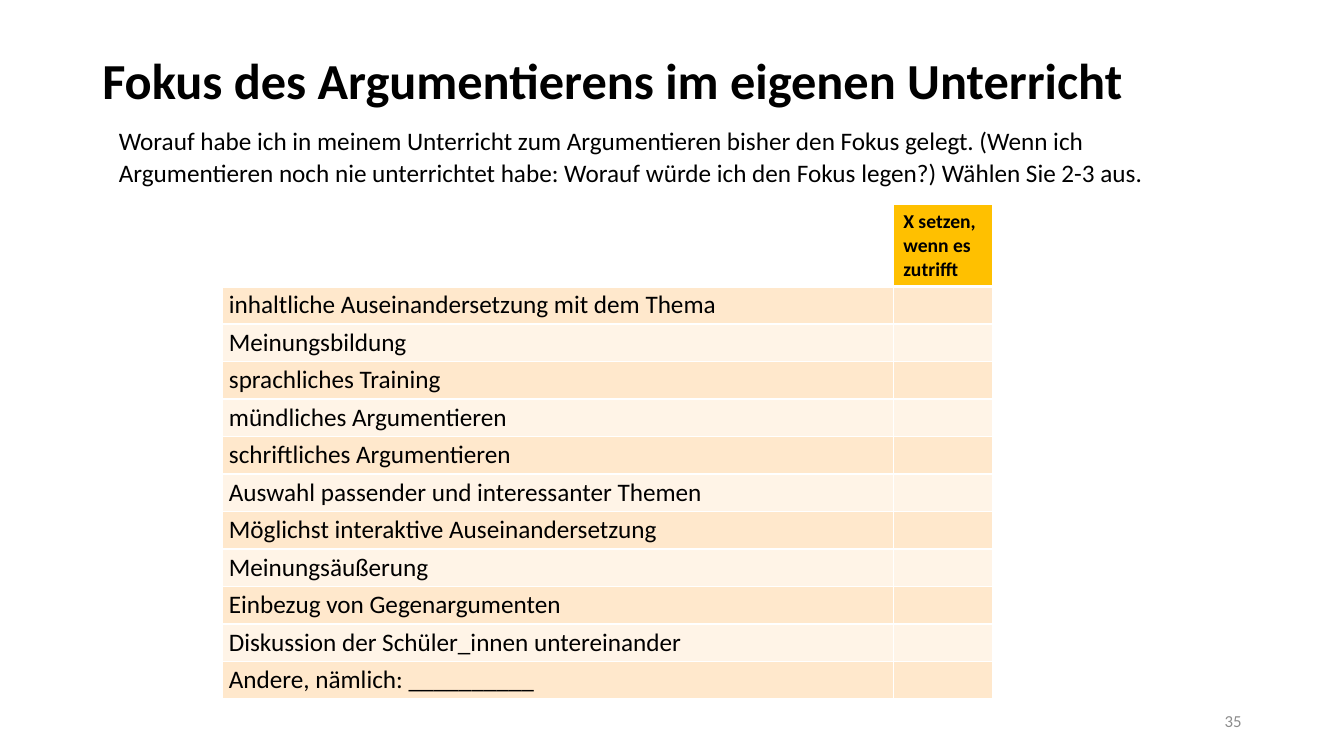
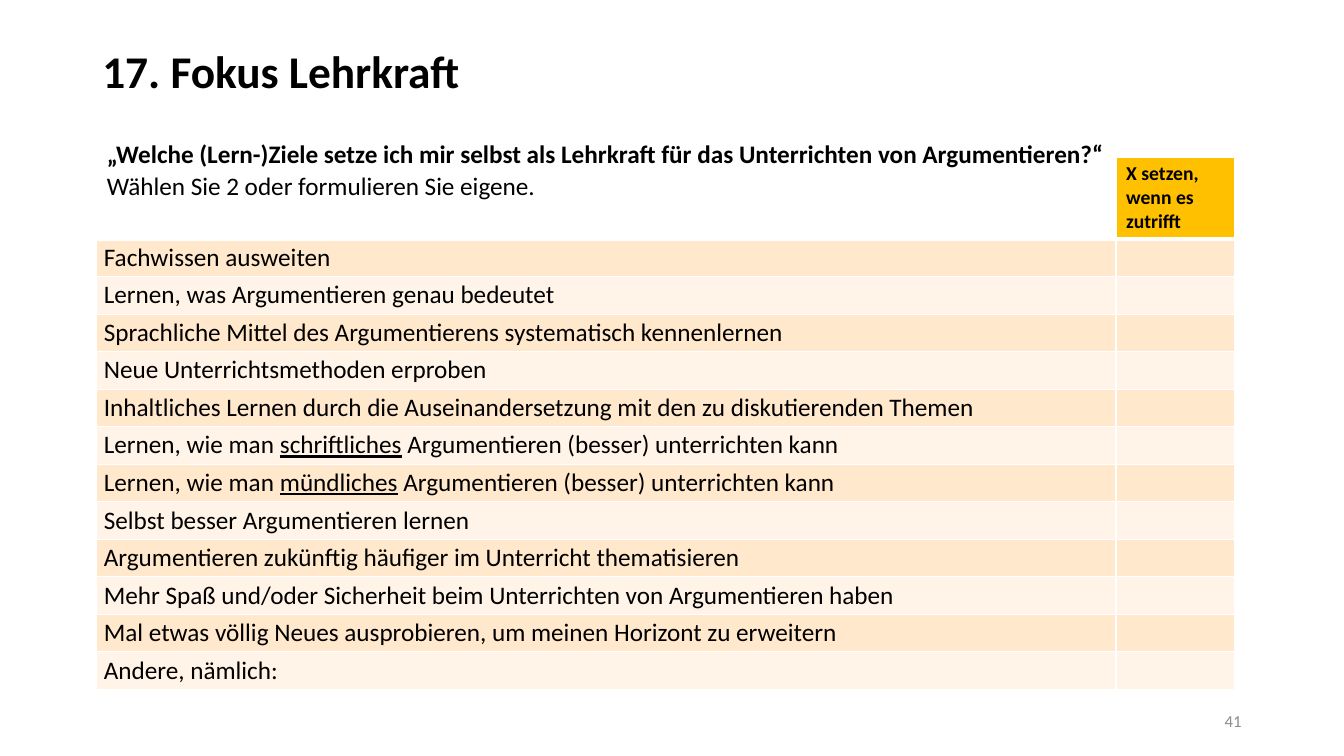
from lxml import etree
from pptx import Presentation
from pptx.dml.color import RGBColor
from pptx.enum.text import MSO_ANCHOR, PP_ALIGN
from pptx.oxml.ns import qn
from pptx.util import Pt

MIDDLE, TOP = MSO_ANCHOR.MIDDLE, MSO_ANCHOR.TOP
LEFT, RIGHT = PP_ALIGN.LEFT, PP_ALIGN.RIGHT

FONT = "Calibri"
BLACK, GREY, WHITE = "000000", "8C8C8C", "FFFFFF"
AMBER = "FFC000"
BANDS = ("FFE8CC", "FFF4E7")
BODY_SIZE = 18
HEADER_HEIGHT, ROW_HEIGHT = 58.5, 26.8
MARK_HEADING = "X setzen, wenn es zutrifft"

TEACHING_FOCUS = [
    "inhaltliche Auseinandersetzung mit dem Thema",
    "Meinungsbildung",
    "sprachliches Training",
    "mündliches Argumentieren",
    "schriftliches Argumentieren",
    "Auswahl passender und interessanter Themen",
    "Möglichst interaktive Auseinandersetzung",
    "Meinungsäußerung",
    "Einbezug von Gegenargumenten",
    "Diskussion der Schüler_innen untereinander",
    "Andere, nämlich: __________",
]


def learn_to_teach(mode):
    return [("Lernen, wie man ", False, False), (mode, False, True),
            (" Argumentieren (besser) unterrichten kann", False, False)]


TEACHER_GOALS = [
    "Fachwissen ausweiten",
    "Lernen, was Argumentieren genau bedeutet",
    "Sprachliche Mittel des Argumentierens systematisch kennenlernen",
    "Neue Unterrichtsmethoden erproben",
    "Inhaltliches Lernen durch die Auseinandersetzung mit den zu diskutierenden Themen",
    learn_to_teach("schriftliches"),
    learn_to_teach("mündliches"),
    "Selbst besser Argumentieren lernen",
    "Argumentieren zukünftig häufiger im Unterricht thematisieren",
    "Mehr Spaß und/oder Sicherheit beim Unterrichten von Argumentieren haben",
    "Mal etwas völlig Neues ausprobieren, um meinen Horizont zu erweitern",
    "Andere, nämlich:",
]


def color(hex_string):
    return RGBColor.from_string(hex_string)


class Deck:
    def __init__(self):
        self.prs = Presentation()
        self.prs.slide_width, self.prs.slide_height = Pt(960), Pt(540)
        self.slide = None

    def new_slide(self):
        self.slide = self.prs.slides.add_slide(self.prs.slide_layouts[6])

    def add_runs(self, paragraph, content, size, ink=BLACK, bold=False):
        """Content is a string or a list of (text, bold, underline)."""
        runs = [(content, bold, False)] if isinstance(content, str) else content
        for text, is_bold, is_underlined in runs:
            run = paragraph.add_run()
            run.text = text
            font = run.font
            font.name, font.size, font.bold = FONT, Pt(size), is_bold
            font.underline = is_underlined
            font.color.rgb = color(ink)

    def text(self, box, content, size, ink=BLACK, bold=False, anchor=MIDDLE, align=LEFT):
        frame = self.slide.shapes.add_textbox(*map(Pt, box)).text_frame
        frame.word_wrap = True
        frame.vertical_anchor = anchor
        paragraph = frame.paragraphs[0]
        paragraph.alignment = align
        self.add_runs(paragraph, content, size, ink, bold)
        return paragraph

    def title(self, content, size, height):
        self.text((66, 28.8, 828, height), content, size, bold=True)

    def intro(self, box, content):
        paragraph = self.text(box, content, BODY_SIZE, anchor=TOP)
        paragraph.line_spacing = 1.07
        paragraph.space_after = Pt(8)

    def page_number(self, number):
        self.text((678, 500.5, 216, 28.8), number, 12, GREY, align=RIGHT)

    def paint_cell(self, cell, fill, bottom_width=1):
        """Give a cell white borders and a solid fill."""
        properties = cell._tc.get_or_add_tcPr()
        for side, width in (("L", 1), ("R", 1), ("T", 1), ("B", bottom_width)):
            line = etree.SubElement(properties, qn(f"a:ln{side}"), w=str(Pt(width)))
            solid = etree.SubElement(line, qn("a:solidFill"))
            etree.SubElement(solid, qn("a:srgbClr"), val=WHITE)
        cell.fill.solid()
        cell.fill.fore_color.rgb = color(fill)

    def checklist(self, left, top, widths, items):
        """Draw a table of statements with a column for marking them."""
        height = HEADER_HEIGHT + ROW_HEIGHT * len(items)
        table = self.slide.shapes.add_table(
            len(items) + 1, 2, Pt(left), Pt(top), Pt(sum(widths)), Pt(height)).table
        table.first_row = table.horz_banding = False
        for column, width in zip(table.columns, widths):
            column.width = Pt(width)

        table.rows[0].height = Pt(HEADER_HEIGHT)
        for column, fill in enumerate((WHITE, AMBER)):
            self.paint_cell(table.cell(0, column), fill, bottom_width=3)
        heading = table.cell(0, 1).text_frame.paragraphs[0]
        self.add_runs(heading, MARK_HEADING, 14, bold=True)

        for index, item in enumerate(items):
            row = index + 1
            table.rows[row].height = Pt(ROW_HEIGHT)
            for column in range(2):
                cell = table.cell(row, column)
                cell.margin_left = cell.margin_right = Pt(5)
                cell.margin_top = cell.margin_bottom = Pt(0)
                cell.vertical_anchor = MIDDLE
                self.paint_cell(cell, BANDS[index % 2])
            self.add_runs(table.cell(row, 0).text_frame.paragraphs[0], item, BODY_SIZE)


def main():
    deck = Deck()

    deck.new_slide()
    deck.title("Fokus des Argumentierens im eigenen Unterricht", 36, 55.5)
    deck.checklist(158.5, 146.2, (479.5, 71.3), TEACHING_FOCUS)
    deck.intro((77.8, 84.2, 755.3, 52.6),
               "Worauf habe ich in meinem Unterricht zum Argumentieren bisher den Fokus "
               "gelegt. (Wenn ich Argumentieren noch nie unterrichtet habe: Worauf würde "
               "ich den Fokus legen?) Wählen Sie 2-3 aus.")
    deck.page_number("35")

    deck.new_slide()
    deck.title("17. Fokus Lehrkraft", 32.4, 42.5)
    deck.checklist(69.2, 112.3, (728, 85), TEACHER_GOALS)
    deck.intro((69.2, 93.6, 728.6, 52.6), [
        ("„Welche (Lern-)Ziele setze ich mir selbst als Lehrkraft für das Unterrichten "
         "von Argumentieren?“ ", True, False),
        ("Wählen Sie 2 oder formulieren Sie eigene.", False, False),
    ])
    deck.page_number("41")

    deck.prs.save("out.pptx")


if __name__ == "__main__":
    main()
